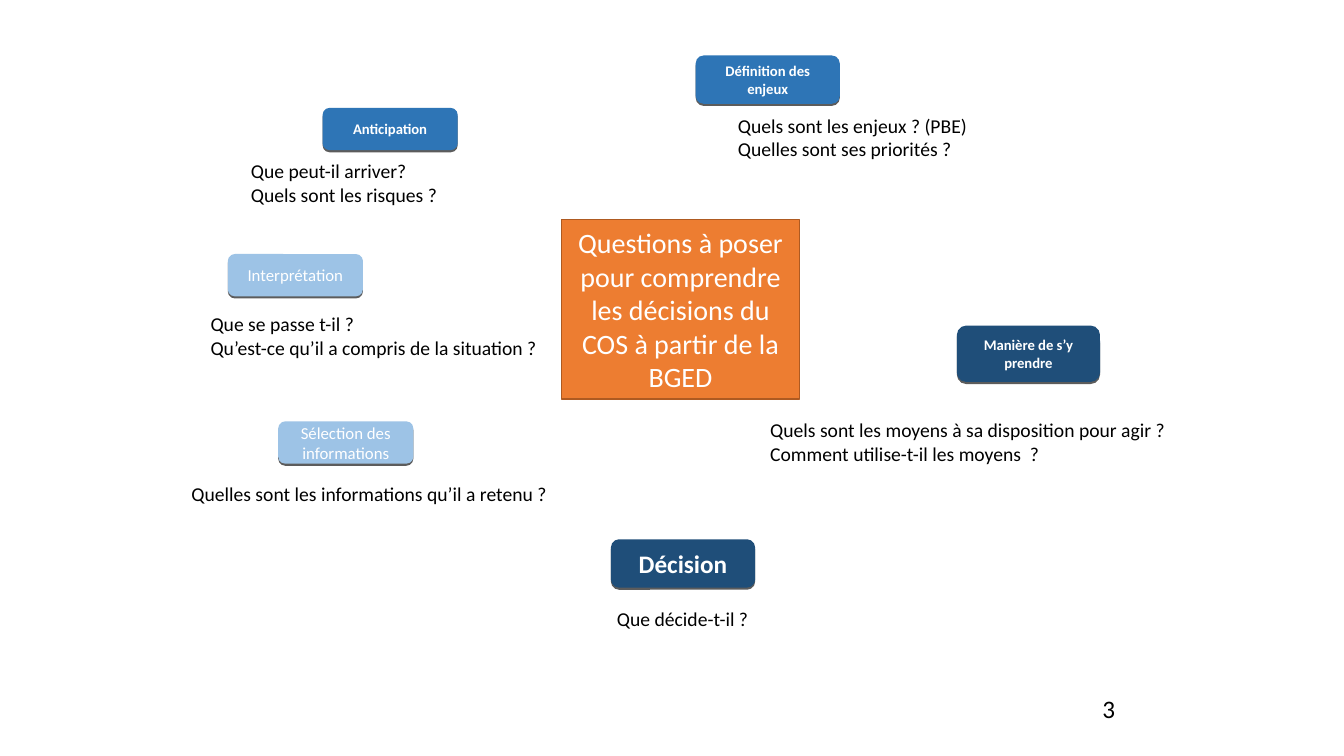
import pptx
import pptx.util
import pptx.dml.color
import pptx.enum.shapes
import pptx.enum.text
import pptx.oxml
import pptx.oxml.ns

Inches = pptx.util.Inches
PRESET = pptx.enum.shapes.MSO_SHAPE
ALIGN = pptx.enum.text.PP_ALIGN
FIT = pptx.enum.text.MSO_AUTO_SIZE.SHAPE_TO_FIT_TEXT

COLORS = {
    "white": "FFFFFF", "black": "000000",
    "light": "9DC3E6", "medium": "2E75B6", "dark": "1F4E79",
    "orange": "ED7D31", "orange_edge": "AE5A21",
}
SHADOW = (
    '<a:outerShdw xmlns:a="http://schemas.openxmlformats.org/drawingml/2006/main" '
    'blurRad="0" dist="19050" dir="5400000" algn="ctr" rotWithShape="0">'
    '<a:srgbClr val="000000"><a:alpha val="63000"/></a:srgbClr></a:outerShdw>'
)


def rgb(name):
    return pptx.dml.color.RGBColor.from_string(COLORS[name])


def write(frame, text, size=14, color="black", bold=False, align=ALIGN.LEFT, wrap=True):
    frame.word_wrap = wrap
    for index, line in enumerate(text.split("\n")):
        paragraph = frame.add_paragraph() if index else frame.paragraphs[0]
        paragraph.alignment = align
        run = paragraph.add_run()
        run.text = line
        run.font.name = "Calibri"
        run.font.size = pptx.util.Pt(size)
        run.font.bold = bold
        run.font.color.rgb = rgb(color)


deck = pptx.Presentation()
deck.slide_width, deck.slide_height = Inches(13.33), Inches(7.5)
slide = deck.slides.add_slide(deck.slide_layouts[6])

# Page number
page_number = slide.shapes.add_textbox(Inches(8.83), Inches(6.83), Inches(2.33), Inches(0.52))
write(page_number.text_frame, "3", size=18, align=ALIGN.RIGHT)

# Steps of the reasoning: label, left, top, width, height, fill, text size, bold
steps = [
    ("Anticipation", 3.2, 1.07, 1.34, 0.42, "medium", 10.5, True),
    ("Définition des enjeux", 6.9, 0.55, 1.43, 0.48, "medium", 10.5, True),
    ("Interprétation", 2.26, 2.52, 1.34, 0.42, "light", 12, False),
    ("Sélection des informations", 2.76, 4.18, 1.34, 0.42, "light", 12, False),
    ("Décision", 6.06, 5.35, 1.43, 0.48, "dark", 18, True),
    ("Manière de s’y prendre", 9.49, 3.23, 1.42, 0.56, "dark", 10.5, True),
]
for label, left, top, width, height, fill, size, bold in steps:
    step = slide.shapes.add_shape(PRESET.ROUNDED_RECTANGLE, Inches(left), Inches(top),
                                  Inches(width), Inches(height))
    step.fill.solid()
    step.fill.fore_color.rgb = rgb(fill)
    step.line.fill.background()
    step.shadow.inherit = False
    effects = step.element.spPr.find(pptx.oxml.ns.qn("a:effectLst"))
    effects.append(pptx.oxml.parse_xml(SHADOW))
    write(step.text_frame, label, size=size, color="white", bold=bold, align=ALIGN.CENTER)

# Questions under each step: text, left, top, width, height
questions = [
    ("Quelles sont les informations qu’il a retenu ?", 1.8, 4.73, 3.76, 0.34),
    ("Que se passe t-il ?\nQu’est-ce qu’il a compris de la situation ?", 1.99, 3.05, 3.54, 0.57),
    ("Que peut-il arriver?\nQuels sont les risques ?", 2.39, 1.53, 2.07, 0.57),
    ("Quels sont les enjeux ? (PBE)\nQuelles sont ses priorités ?", 7.22, 1.08, 2.5, 0.57),
    ("Quels sont les moyens à sa disposition pour agir ?\nComment utilise-t-il les moyens  ?",
     7.54, 4.1, 4.25, 0.57),
    ("Que décide-t-il ?", 6.02, 5.97, 1.52, 0.34),
]
for text, left, top, width, height in questions:
    question = slide.shapes.add_textbox(Inches(left), Inches(top), Inches(width), Inches(height))
    question.text_frame.auto_size = FIT
    write(question.text_frame, text, wrap=False)

# Central topic
topic = slide.shapes.add_shape(PRESET.RECTANGLE, Inches(5.57), Inches(2.18),
                               Inches(2.36), Inches(1.78))
topic.fill.solid()
topic.fill.fore_color.rgb = rgb("orange")
topic.line.color.rgb = rgb("orange_edge")
topic.line.width = pptx.util.Pt(1)
topic.shadow.inherit = False
topic.text_frame.auto_size = FIT
write(topic.text_frame,
      "Questions à poser pour comprendre les décisions du COS à partir de la BGED",
      size=20, color="white", align=ALIGN.CENTER)

deck.save("out.pptx")
